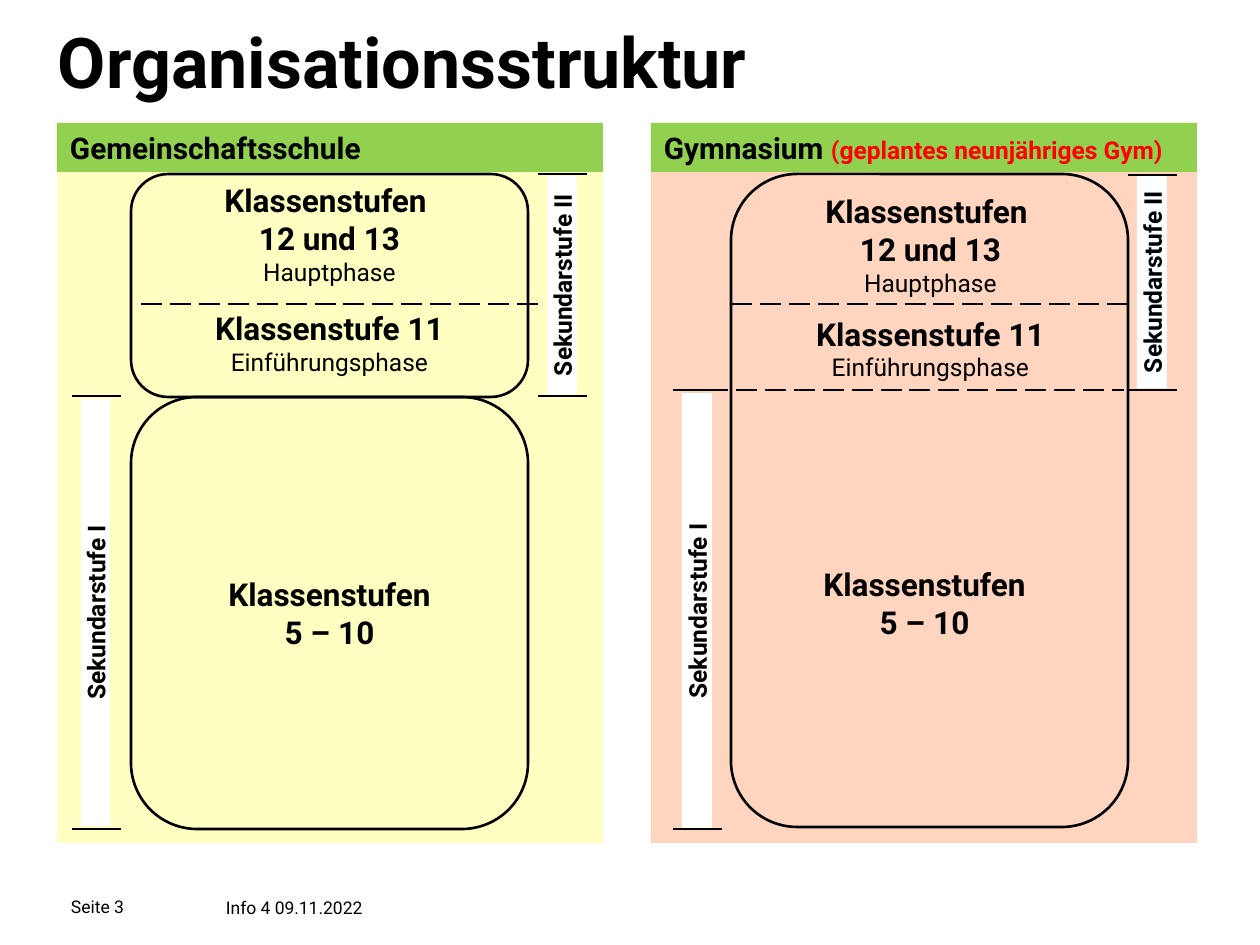
from dataclasses import dataclass
from typing import NamedTuple

import pptx
import pptx.dml.color
import pptx.enum.dml
import pptx.enum.shapes
import pptx.enum.text
import pptx.oxml.ns
import pptx.util
from lxml import etree

PX_PER_INCH = 126
FONT = "Roboto"
BLACK, WHITE, RED, GREEN = "000000", "FFFFFF", "FF0000", "92D050"
SHAPES = pptx.enum.shapes.MSO_SHAPE
ANCHOR = pptx.enum.text.MSO_ANCHOR
ALIGN = pptx.enum.text.PP_ALIGN


class Box(NamedTuple):
    left: int
    top: int
    width: int
    height: int


class Words(NamedTuple):
    text: str
    size: int
    bold: bool = True
    color: str = BLACK


class Line(NamedTuple):
    words: list[Words]
    space_before: int = 0


class Insets(NamedTuple):
    left: int = 13
    top: int = 6
    right: int = 13
    bottom: int = 6


@dataclass
class Level:
    """A Sekundarstufe: an upright label between two bracket lines."""
    name: str
    label: Box
    bracket_left: int
    bracket_tops: tuple[int, int]


@dataclass
class School:
    left: int
    color: str
    heading: list[Words]
    levels: list[Level]


SCHOOLS = [
    School(57, "FFFF99", [Words("Gemeinschaftsschule", 17)], [
        Level("Sekundarstufe II", Box(547, 176, 30, 218), 538, (174, 396)),
        Level("Sekundarstufe I", Box(81, 399, 29, 427), 72, (396, 829)),
    ]),
    School(651, "FFBA97", [Words("Gymnasium ", 17),
                           Words("(geplantes neunjähriges Gym)", 14, True, RED)], [
        Level("Sekundarstufe II", Box(1137, 176, 30, 212), 1128, (175, 390)),
        Level("Sekundarstufe I", Box(682, 393, 30, 436), 673, (390, 829)),
    ]),
]
SCHOOL_TOP, SCHOOL_WIDTH, SCHOOL_HEIGHT, HEADING_HEIGHT = 123, 546, 720, 49
BRACKET_WIDTH = 49
LOWER_GRADES = [Line([Words("Klassenstufen", 18)]), Line([Words("5 – 10", 18)])]


def emu(px: int) -> int:
    return round(px * 914400 / PX_PER_INCH)


def rgb(color: str) -> pptx.dml.color.RGBColor:
    return pptx.dml.color.RGBColor.from_string(color)


def upper_grades(phase_gap: int) -> list[Line]:
    return [
        Line([Words("Klassenstufen \v12 und 13", 18)]),
        Line([Words("Hauptphase", 14, False)]),
        Line([Words("Klassenstufe 11", 18)], phase_gap),
        Line([Words("Einführungsphase", 14, False)]),
    ]


def write(frame, lines: list[Line], align=ALIGN.CENTER, anchor=ANCHOR.MIDDLE,
          insets: Insets = Insets(), wrap: bool = True) -> None:
    frame.word_wrap = wrap
    frame.vertical_anchor = anchor
    frame.margin_left, frame.margin_top, frame.margin_right, frame.margin_bottom = map(emu, insets)
    for index, line in enumerate(lines):
        paragraph = frame.add_paragraph() if index else frame.paragraphs[0]
        paragraph.alignment = align
        if line.space_before:
            paragraph.space_before = pptx.util.Pt(line.space_before)
        for words in line.words:
            # The vertical tab becomes a line break only through paragraph.text.
            if len(line.words) == 1:
                paragraph.text = words.text
                runs = paragraph.runs
            else:
                runs = [paragraph.add_run()]
                runs[0].text = words.text
            for run in runs:
                run.font.name = FONT
                run.font.size = pptx.util.Pt(words.size)
                run.font.bold = words.bold
                run.font.color.rgb = rgb(words.color)


def add_text(slide, box: Box, lines: list[Line], **layout) -> None:
    write(slide.shapes.add_textbox(*map(emu, box)).text_frame, lines, **layout)


def add_area(slide, box: Box, color: str, opacity: int = 100):
    area = slide.shapes.add_shape(SHAPES.RECTANGLE, *map(emu, box))
    area.shadow.inherit = False
    area.fill.solid()
    area.fill.fore_color.rgb = rgb(color)
    area.line.fill.background()
    if opacity < 100:
        fill_color = area.fill._xPr.find(".//" + pptx.oxml.ns.qn("a:srgbClr"))
        etree.SubElement(fill_color, pptx.oxml.ns.qn("a:alpha"), val=str(opacity * 1000))
    return area


def add_stage(slide, box: Box):
    """Add the rounded outline around a group of grades."""
    stage = slide.shapes.add_shape(SHAPES.FLOWCHART_ALTERNATE_PROCESS, *map(emu, box))
    stage.shadow.inherit = False
    stage.fill.background()
    stage.line.color.rgb = rgb(BLACK)
    stage.line.width = pptx.util.Pt(1.5)
    return stage


def add_rule(slide, left: int, right: int, top: int, dashed: bool = False) -> None:
    rule = slide.shapes.add_connector(
        pptx.enum.shapes.MSO_CONNECTOR.STRAIGHT, emu(left), emu(top), emu(right), emu(top))
    rule.line.color.rgb = rgb(BLACK)
    rule.line.width = pptx.util.Pt(1.5 if dashed else 0.75)
    if dashed:
        rule.line.dash_style = pptx.enum.dml.MSO_LINE.LONG_DASH
    etree.SubElement(rule._element.spPr, pptx.oxml.ns.qn("a:effectLst"))


def add_level(slide, level: Level) -> None:
    left, top, width, height = level.label
    offset = (height - width) // 2
    label = add_area(slide, Box(left - offset, top + offset, height, width), WHITE)
    label.rotation = 270
    write(label.text_frame, [Line([Words(level.name, 14)])],
          insets=Insets(0, 0, 0, 0), wrap=False)
    for bracket_top in level.bracket_tops:
        add_rule(slide, level.bracket_left, level.bracket_left + BRACKET_WIDTH, bracket_top)


def add_school(slide, school: School) -> None:
    add_area(slide, Box(school.left, SCHOOL_TOP, SCHOOL_WIDTH, SCHOOL_HEIGHT), school.color, 60)
    heading = add_area(slide, Box(school.left, SCHOOL_TOP, SCHOOL_WIDTH, HEADING_HEIGHT), GREEN)
    write(heading.text_frame, [Line(school.heading)], align=ALIGN.LEFT)
    for level in school.levels:
        add_level(slide, level)


def main() -> None:
    presentation = pptx.Presentation()
    presentation.slide_width = emu(1260)
    presentation.slide_height = emu(945)
    slide = presentation.slides.add_slide(presentation.slide_layouts[5])

    title = slide.shapes.title
    title.left, title.top, title.width, title.height = map(emu, Box(45, 13, 751, 98))
    write(title.text_frame, [Line([Words("Organisationsstruktur", 40)])],
          align=ALIGN.LEFT, anchor=ANCHOR.TOP, wrap=False)

    for school in SCHOOLS:
        add_school(slide, school)

    lower_stage = add_stage(slide, Box(131, 397, 397, 432))
    write(lower_stage.text_frame, LOWER_GRADES)
    upper_stage = add_stage(slide, Box(131, 174, 397, 223))
    write(upper_stage.text_frame, upper_grades(13), anchor=ANCHOR.BOTTOM,
          insets=Insets(0, 0, 0, 10))
    add_rule(slide, 141, 538, 304, dashed=True)

    add_stage(slide, Box(731, 174, 397, 653))
    add_text(slide, Box(780, 186, 301, 242), upper_grades(10), anchor=ANCHOR.TOP)
    add_text(slide, Box(780, 559, 289, 127), LOWER_GRADES, anchor=ANCHOR.TOP)
    add_rule(slide, 731, 1128, 304, dashed=True)
    add_rule(slide, 707, 1124, 390, dashed=True)

    add_text(slide, Box(71, 891, 159, 30), [Line([Words("Seite 3", 10, False)])],
             align=ALIGN.LEFT, insets=Insets(0, 0, 0, 0), wrap=False)
    add_text(slide, Box(213, 891, 265, 30), [Line([Words("Info 4 09.11.2022", 10, False)])],
             align=ALIGN.LEFT, anchor=ANCHOR.TOP)
    presentation.save("out.pptx")


if __name__ == "__main__":
    main()
